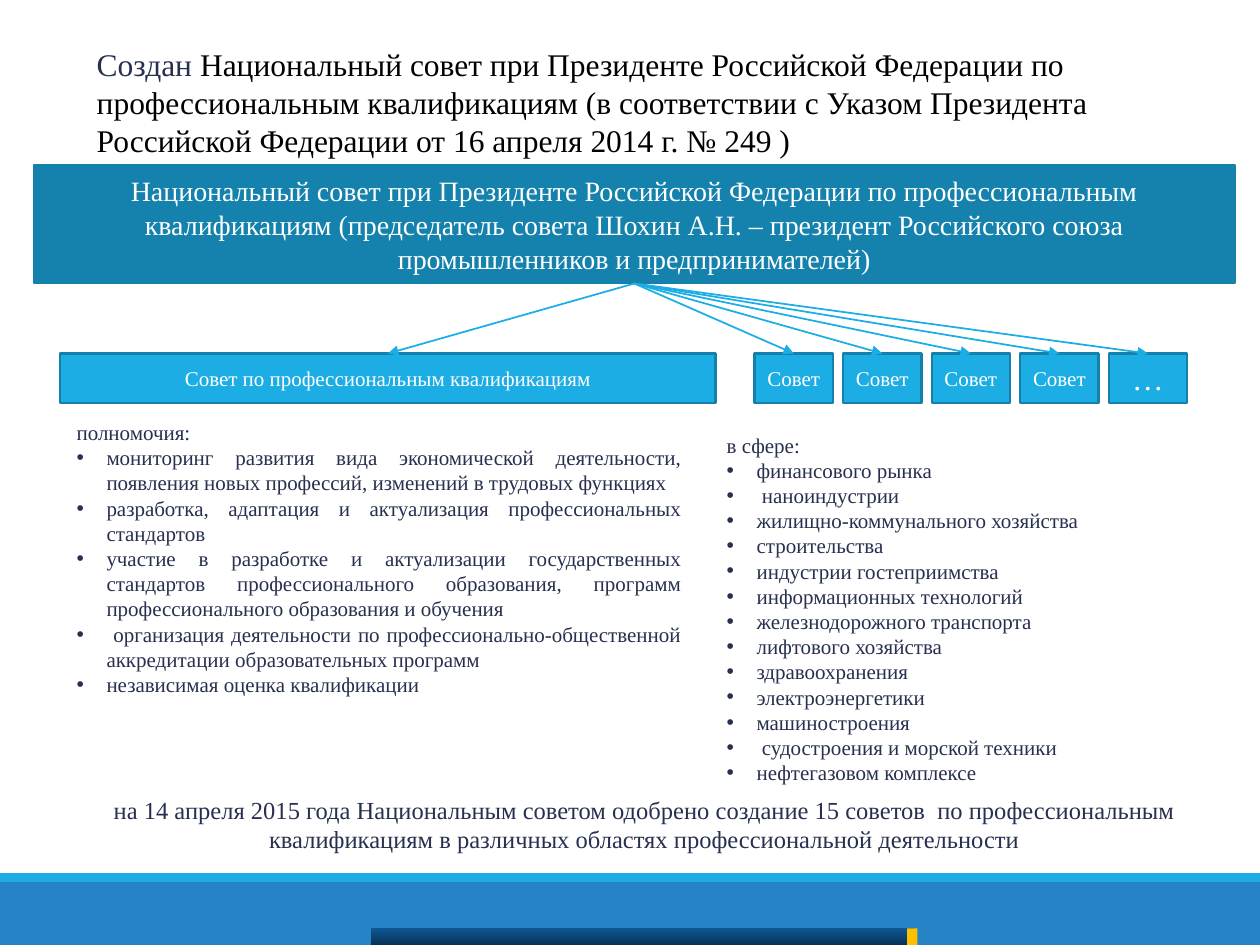
"""Build a slide on the national council and its sector councils for qualifications."""
from lxml import etree
from pptx import Presentation
from pptx import util as u
from pptx.dml.color import RGBColor
from pptx.enum import shapes, text
from pptx.oxml.ns import qn

FONT = "Times New Roman"
COLORS = {
    "council": "1482AC", "bright": "1CADE4", "border": "1580A9", "footer": "2683C6",
    "ink": "27304E", "black": "000000", "white": "FFFFFF", "accent": "FFC000",
    "fade_top": "003C73", "fade_bottom": "001C35",
}
POWERS = [
    "мониторинг развития вида экономической деятельности, появления новых профессий, изменений в трудовых функциях",
    "разработка, адаптация и актуализация профессиональных стандартов",
    "участие в разработке и актуализации государственных стандартов профессионального образования, "
    "программ профессионального образования и обучения",
    " организация деятельности по профессионально-общественной аккредитации образовательных программ",
    "независимая оценка квалификации",
]
SECTORS = [
    "финансового рынка", " наноиндустрии", "жилищно-коммунального хозяйства", "строительства",
    "индустрии гостеприимства", "информационных технологий", "железнодорожного транспорта",
    "лифтового хозяйства", "здравоохранения", "электроэнергетики", "машиностроения",
    " судостроения и морской техники", "нефтегазовом комплексе",
]


def color(name):
    return RGBColor.from_string(COLORS[name])


def points(*lengths):
    return [u.Pt(length) for length in lengths]


def add_span(para, content, size, ink):
    span = para.add_run()
    span.text = content
    span.font.name = FONT
    span.font.size = u.Pt(size)
    span.font.color.rgb = color(ink)


def add_bar(page, bounds, fill=None):
    bar = page.shapes.add_shape(shapes.MSO_SHAPE.RECTANGLE, *points(*bounds))
    bar.shadow.inherit = False
    bar.line.fill.background()
    if fill:
        bar.fill.solid()
        bar.fill.fore_color.rgb = color(fill)
    return bar


def add_faded_bar(page, bounds, stops):
    bar = add_bar(page, bounds)
    bar.fill.gradient()
    bar.fill.gradient_angle = 270
    for stop, (name, _) in zip(bar.fill.gradient_stops, stops):
        stop.color.rgb = color(name)
    tints = bar.element.spPr.iter(qn("a:srgbClr"))
    for tint, (_, opacity) in zip(list(tints), stops):
        etree.SubElement(tint, qn("a:alpha"), val=str(opacity * 1000))


def add_box(page, bounds, content, size, fill="bright", margin=7.2):
    box = add_bar(page, bounds, fill)
    box.line.color.rgb = color("border")
    box.line.width = u.Pt(1.25)
    frame = box.text_frame
    frame.word_wrap = True
    frame.vertical_anchor = text.MSO_ANCHOR.MIDDLE
    frame.margin_left = frame.margin_right = u.Pt(margin)
    para = frame.paragraphs[0]
    para.alignment = text.PP_ALIGN.CENTER
    add_span(para, content, size, "white")
    return box


def add_arrow(page, source, target):
    arrow = page.shapes.add_connector(shapes.MSO_CONNECTOR.STRAIGHT, 0, 0, 0, 0)
    arrow.begin_connect(source, 2)
    arrow.end_connect(target, 0)
    arrow.line.color.rgb = color("bright")
    arrow.line.width = u.Pt(1)
    etree.SubElement(arrow.line._get_or_add_ln(), qn("a:tailEnd"), type="triangle")
    etree.SubElement(arrow.element.spPr, qn("a:effectLst"))


def add_text(page, bounds, spans, size, align=text.PP_ALIGN.LEFT, anchor=text.MSO_ANCHOR.TOP):
    frame = page.shapes.add_textbox(*points(*bounds)).text_frame
    frame.word_wrap = True
    frame.vertical_anchor = anchor
    para = frame.paragraphs[0]
    para.alignment = align
    for content, ink in spans:
        add_span(para, content, size, ink)
    return frame


def add_list(page, bounds, heading, items, align):
    frame = add_text(page, bounds, [(heading, "ink")], 12, align)
    for item in items:
        para = frame.add_paragraph()
        para.alignment = align
        props = para._p.get_or_add_pPr()
        props.set("marL", str(u.Pt(17.1)))
        props.set("indent", str(-u.Pt(17.1)))
        etree.SubElement(props, qn("a:buFont"), typeface="Arial")
        etree.SubElement(props, qn("a:buChar"), char="•")
        add_span(para, item, 12, "ink")


def main():
    deck = Presentation()
    deck.slide_width, deck.slide_height = points(720, 540)
    page = deck.slides.add_slide(deck.slide_layouts[6])
    add_bar(page, (0, 504, 720, 36), "footer")
    add_bar(page, (0, 499, 720, 5), "bright")

    national = add_box(
        page, (19.4, 94.3, 686.2, 67.7),
        "Национальный совет при Президенте Российской Федерации по профессиональным квалификациям "
        "(председатель совета Шохин А.Н. – президент Российского союза промышленников и предпринимателей)",
        16, "council")
    councils = [add_box(page, (34.5, 202, 374.4, 28.4), "Совет по профессиональным квалификациям", 12)]
    for index, (label, size) in enumerate([("Совет", 12)] * 4 + [("…", 18)]):
        councils.append(add_box(page, (431.2 + 50.6 * index, 202, 44.8, 28.4), label, size, margin=0))
    for council in councils:
        add_arrow(page, national, council)

    add_text(
        page, (20.9, 450.7, 694.8, 41.2),
        [("на 14 апреля 2015 года Национальным советом одобрено создание 15 советов  по профессиональным "
          "квалификациям в различных областях профессиональной деятельности", "ink")],
        14, text.PP_ALIGN.CENTER)
    add_list(page, (408.2, 243.4, 285.8, 244.8), "в сфере:", SECTORS, text.PP_ALIGN.LEFT)
    add_list(page, (36.7, 236.2, 360, 167), "полномочия:", POWERS, text.PP_ALIGN.JUSTIFY)
    add_text(
        page, (48.2, 0, 652.3, 94.3),
        [("Создан ", "ink"),
         ("Национальный совет при Президенте Российской Федерации по профессиональным квалификациям "
          "(в соответствии с Указом Президента Российской Федерации от 16 апреля 2014 г. № 249 )", "black")],
        18, anchor=text.MSO_ANCHOR.BOTTOM)
    add_faded_bar(page, (212.4, 530.6, 309.6, 9.4), [("fade_top", 60), ("fade_bottom", 80)])
    add_bar(page, (518.4, 530.6, 5.8, 9.4), "accent")
    deck.save("out.pptx")


if __name__ == "__main__":
    main()
